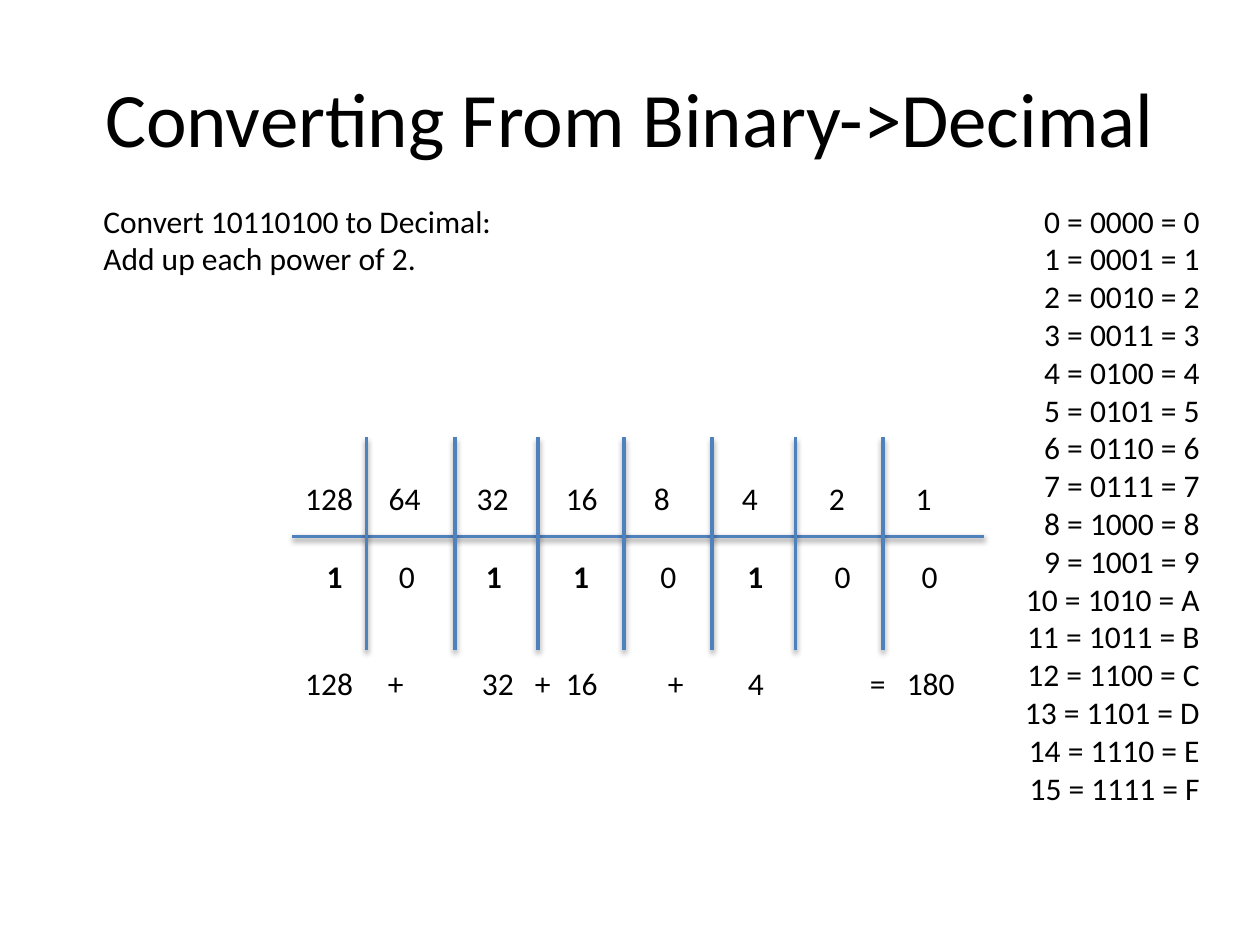
"""Build a slide that converts a binary number to decimal by place value."""
import pptx
import pptx.util
import pptx.dml.color
import pptx.enum.shapes
import pptx.enum.text
from lxml import etree
from pptx.util import Pt

ALIGN = pptx.enum.text.PP_ALIGN
ANCHOR = pptx.enum.text.MSO_ANCHOR
RGB = pptx.dml.color.RGBColor.from_string
NS = "http://schemas.openxmlformats.org/drawingml/2006/main"

THEME = {"font": "Calibri", "text": "000000", "line": "4F81BD",
         "shadow": "000000", "title": 44, "body": 18, "line_width": 2}

TITLE = "Converting From Binary->Decimal"
TASK = ["Convert 10110100 to Decimal:", "Add up each power of 2."]
DIGITS = [f"{n} = {n:04b} = {n:X}" for n in range(16)]

ROW_LEFT, ROW_WIDTH, INSET = 167, 390, 7.2
ROWS = [
    (270, [("128", 188.2), ("64", 231.4), ("32", 281.7), ("16", 332.6),
           ("8", 378.3), ("4", 428.6), ("2", 478.3), ("1", 528)]),
    (314.8, [(bit, 191.4 if i == 0 else 232.6 + 49.8 * (i - 1))
             for i, bit in enumerate("10110100")]),
    (376, [("128", 188.2), ("+", 226.3), ("32", 284.6), ("+", 310.3),
           ("16", 332.6), ("+", 386.3), ("4", 432), ("=", 501.7),
           ("180", 532)]),
]
BIT_ROW = 1
DIVIDERS = [209.5, 260, 307.5, 356.5, 407, 454.5, 504.5]
DIVIDER_TOP, DIVIDER_BOTTOM = 250, 371.5
RULE_LEFT, RULE_RIGHT, RULE_Y = 167, 562.5, 306.5


def add_text(s, box, lines, size, align=ALIGN.LEFT, anchor=ANCHOR.TOP):
    tf = s.shapes.add_textbox(*map(Pt, box)).text_frame
    tf.word_wrap = True
    tf.vertical_anchor = anchor
    tf.text = "\n".join(lines)
    for p in tf.paragraphs:
        style_paragraph(p, size, align)
    return tf


def style_paragraph(p, size, align):
    p.alignment = align
    p.font.name = THEME["font"]
    p.font.size = Pt(size)
    p.font.color.rgb = RGB(THEME["text"])


def add_row(s, top, cells, bold_ones):
    tf = add_text(s, (ROW_LEFT, top, ROW_WIDTH, 29), [""], THEME["body"])
    p = tf.paragraphs[0]
    tabs = etree.Element(f"{{{NS}}}tabLst")
    for text, centre in cells:
        etree.SubElement(tabs, f"{{{NS}}}tab", algn="ctr",
                         pos=str(int(Pt(centre - ROW_LEFT - INSET))))
        r = p.add_run()
        r.text = "\t" + text
        if bold_ones:
            r.font.bold = text == "1"
    p._p.get_or_add_pPr().insert(0, tabs)


def add_line(s, x1, y1, x2, y2):
    line = s.shapes.add_connector(pptx.enum.shapes.MSO_CONNECTOR.STRAIGHT,
                                  *map(Pt, (x1, y1, x2, y2)))
    line.line.color.rgb = RGB(THEME["line"])
    line.line.width = Pt(THEME["line_width"])
    effects = etree.SubElement(line._element.spPr, f"{{{NS}}}effectLst")
    shadow = etree.SubElement(effects, f"{{{NS}}}outerShdw",
                              blurRad=str(int(Pt(3.1))), dist=str(int(Pt(1.6))),
                              dir="5400000", rotWithShape="0")
    color = etree.SubElement(shadow, f"{{{NS}}}srgbClr", val=THEME["shadow"])
    etree.SubElement(color, f"{{{NS}}}alpha", val="38000")


def main():
    prs = pptx.Presentation()
    prs.slide_width, prs.slide_height = Pt(720), Pt(540)
    s = prs.slides.add_slide(prs.slide_layouts[6])
    add_text(s, (36, 21.6, 648, 90), [TITLE], THEME["title"],
             ALIGN.CENTER, ANCHOR.MIDDLE)
    add_line(s, RULE_LEFT, RULE_Y, RULE_RIGHT, RULE_Y)
    for x in DIVIDERS:
        add_line(s, x, DIVIDER_TOP, x, DIVIDER_BOTTOM)
    add_text(s, (52, 111.6, 239, 51), TASK, THEME["body"])
    for i, (top, cells) in enumerate(ROWS):
        add_row(s, top, cells, i == BIT_ROW)
    add_text(s, (565.2, 111.6, 127.5, 356.4), DIGITS, THEME["body"], ALIGN.RIGHT)
    prs.save("out.pptx")


if __name__ == "__main__":
    main()
